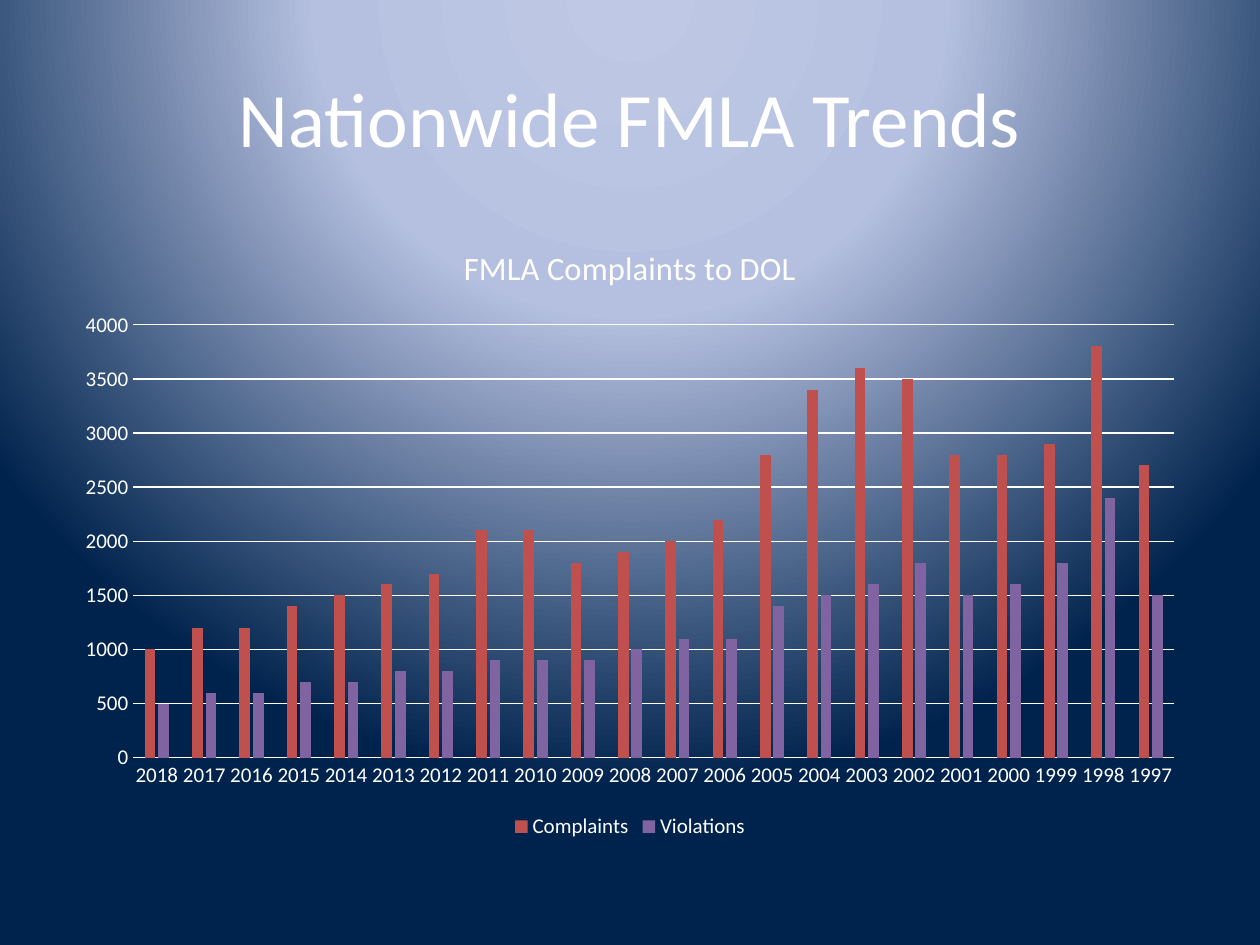
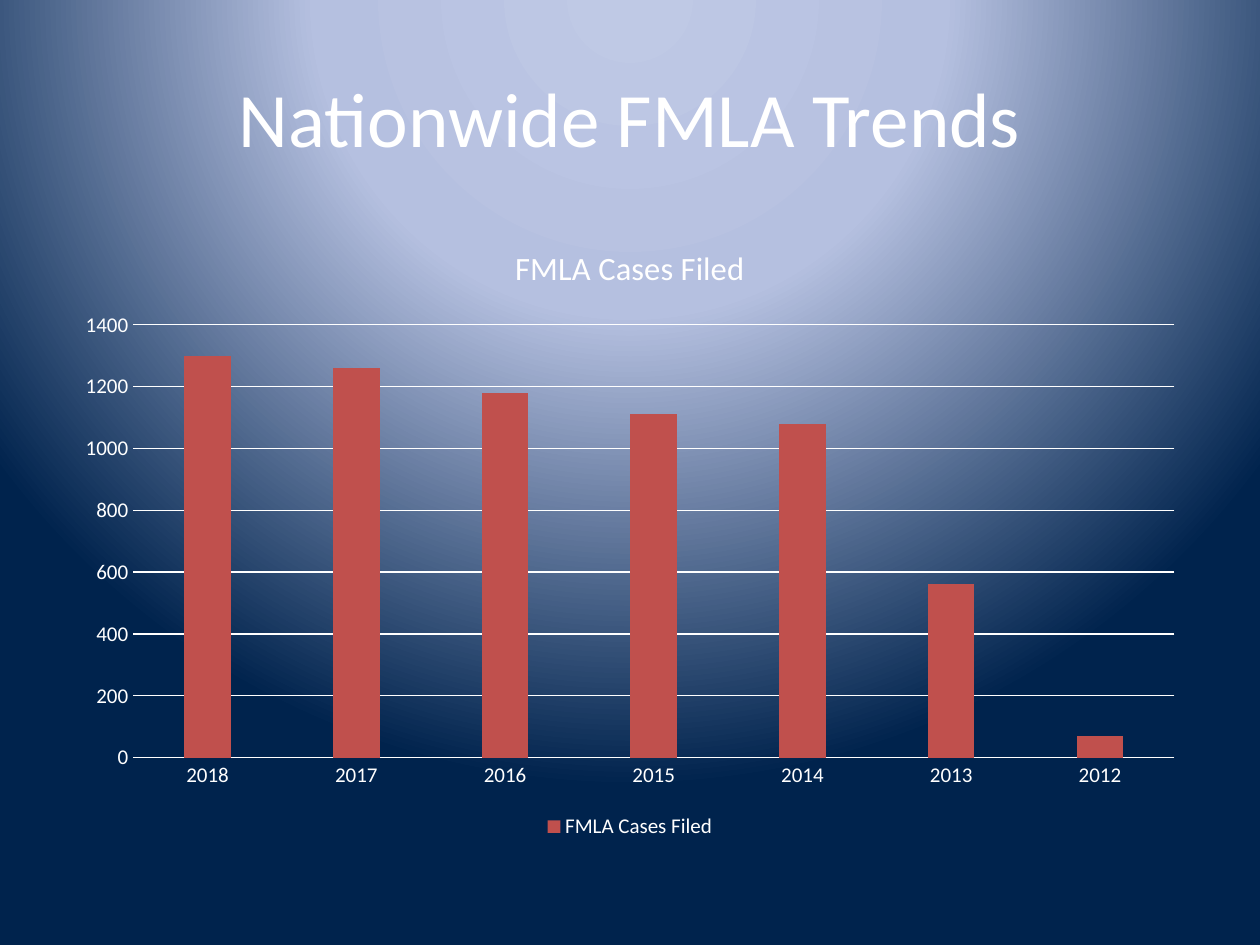
from pptx import Presentation
from pptx.chart import data as chart_data
from pptx.dml.color import RGBColor
from pptx.enum import chart as chart_enum, text as text_enum
from pptx.oxml import parse_xml
from pptx.oxml.ns import nsdecls
from pptx.util import Inches, Pt

# Shared style
WHITE = RGBColor(0xFF, 0xFF, 0xFF)
RED = RGBColor(0xC0, 0x50, 0x4D)
PURPLE = RGBColor(0x80, 0x64, 0xA2)
GLOW = RGBColor(0xBF, 0xC9, 0xE5)
HAZE = RGBColor(0xB5, 0xC0, 0xE0)
NAVY = RGBColor(0x00, 0x23, 0x4D)
FONT = "Calibri"

# Boxes: left, top, width, height in inches
TITLE_BOX = (0.5, 0.3, 9, 1.25)
CHART_BOX = (0.5, 1.75, 9, 4.95)

TITLE = "Nationwide FMLA Trends"
COMPLAINTS = [1000, 1200, 1200, 1400, 1500, 1600, 1700, 2100, 2100, 1800, 1900,
              2000, 2200, 2800, 3400, 3600, 3500, 2800, 2800, 2900, 3800, 2700]
VIOLATIONS = [500, 600, 600, 700, 700, 800, 800, 900, 900, 900, 1000,
              1100, 1100, 1400, 1500, 1600, 1800, 1500, 1600, 1800, 2400, 1500]
CASES_FILED = [1300, 1260, 1180, 1110, 1080, 560, 70]


def style_font(font, size, color=WHITE):
    font.name, font.size, font.bold = FONT, Pt(size), False
    font.color.rgb = color


def write_text(frame, text, size, color=WHITE, align=text_enum.PP_ALIGN.CENTER):
    paragraph = frame.paragraphs[0]
    paragraph.alignment = align
    run = paragraph.add_run()
    run.text = text
    style_font(run.font, size, color)


def style_line(line, color=WHITE, width=0.75):
    line.color.rgb = color
    line.width = Pt(width)


def set_background(master):
    """Give every slide a circular glow from above the top edge."""
    master.background.fill.solid()
    stops = "".join(
        f'<a:gs pos="{percent * 1000}"><a:srgbClr val="{color}"/></a:gs>'
        for percent, color in ((0, GLOW), (40, HAZE), (100, NAVY)))
    gradient = parse_xml(
        f'<a:gradFill {nsdecls("a")} rotWithShape="1"><a:gsLst>{stops}</a:gsLst>'
        '<a:path path="circle">'
        '<a:fillToRect l="50000" t="-80000" r="50000" b="180000"/>'
        '</a:path></a:gradFill>')
    solid = master.element.xpath("./p:cSld/p:bg/p:bgPr/a:solidFill")[0]
    solid.getparent().replace(solid, gradient)


def place_title(slide, box, text):
    title = slide.shapes.title
    title.left, title.top, title.width, title.height = map(Inches, box)
    title.text_frame.vertical_anchor = text_enum.MSO_ANCHOR.MIDDLE
    write_text(title.text_frame, text, size=44)


def style_axes(chart, maximum, step):
    for axis in (chart.category_axis, chart.value_axis):
        axis.major_tick_mark = axis.minor_tick_mark = chart_enum.XL_TICK_MARK.NONE
        style_font(axis.tick_labels.font, 12)
    style_line(chart.category_axis.format.line)
    values = chart.value_axis
    values.minimum_scale, values.maximum_scale, values.major_unit = 0, maximum, step
    values.format.line.fill.background()
    values.has_major_gridlines = True
    style_line(values.major_gridlines.format.line)


def place_column_chart(slide, box, heading, years, series, maximum, step):
    """Series holds (name, values, color) entries."""
    data = chart_data.CategoryChartData()
    data.categories = [str(year) for year in years]
    for name, values, _ in series:
        data.add_series(name, values)
    chart = slide.shapes.add_chart(
        chart_enum.XL_CHART_TYPE.COLUMN_CLUSTERED, *map(Inches, box), data).chart
    style_font(chart.font, 10)

    # Heading and legend
    chart.has_title = True
    write_text(chart.chart_title.text_frame, heading, size=18.6)
    chart.chart_title.include_in_layout = False
    chart.has_legend = True
    chart.legend.position = chart_enum.XL_LEGEND_POSITION.BOTTOM
    chart.legend.include_in_layout = False
    style_font(chart.legend.font, 12)

    # Axes and columns
    style_axes(chart, maximum, step)
    plot = chart.plots[0]
    plot.vary_by_categories = False
    plot.gap_width, plot.overlap = 219, -27
    for columns, (_, _, color) in zip(plot.series, series):
        columns.format.fill.solid()
        columns.format.fill.fore_color.rgb = color


def add_trend_slide(presentation, **chart_options):
    slide = presentation.slides.add_slide(
        presentation.slide_layouts.get_by_name("Title Only"))
    place_title(slide, TITLE_BOX, TITLE)
    place_column_chart(slide, CHART_BOX, **chart_options)


def main():
    presentation = Presentation()
    presentation.slide_width, presentation.slide_height = Inches(10), Inches(7.5)
    set_background(presentation.slide_master)
    add_trend_slide(
        presentation, heading="FMLA Complaints to DOL", years=range(2018, 1996, -1),
        series=[("Complaints", COMPLAINTS, RED), ("Violations", VIOLATIONS, PURPLE)],
        maximum=4000, step=500)
    add_trend_slide(
        presentation, heading="FMLA Cases Filed", years=range(2018, 2011, -1),
        series=[("FMLA Cases Filed", CASES_FILED, RED)], maximum=1400, step=200)
    presentation.save("out.pptx")


if __name__ == "__main__":
    main()
